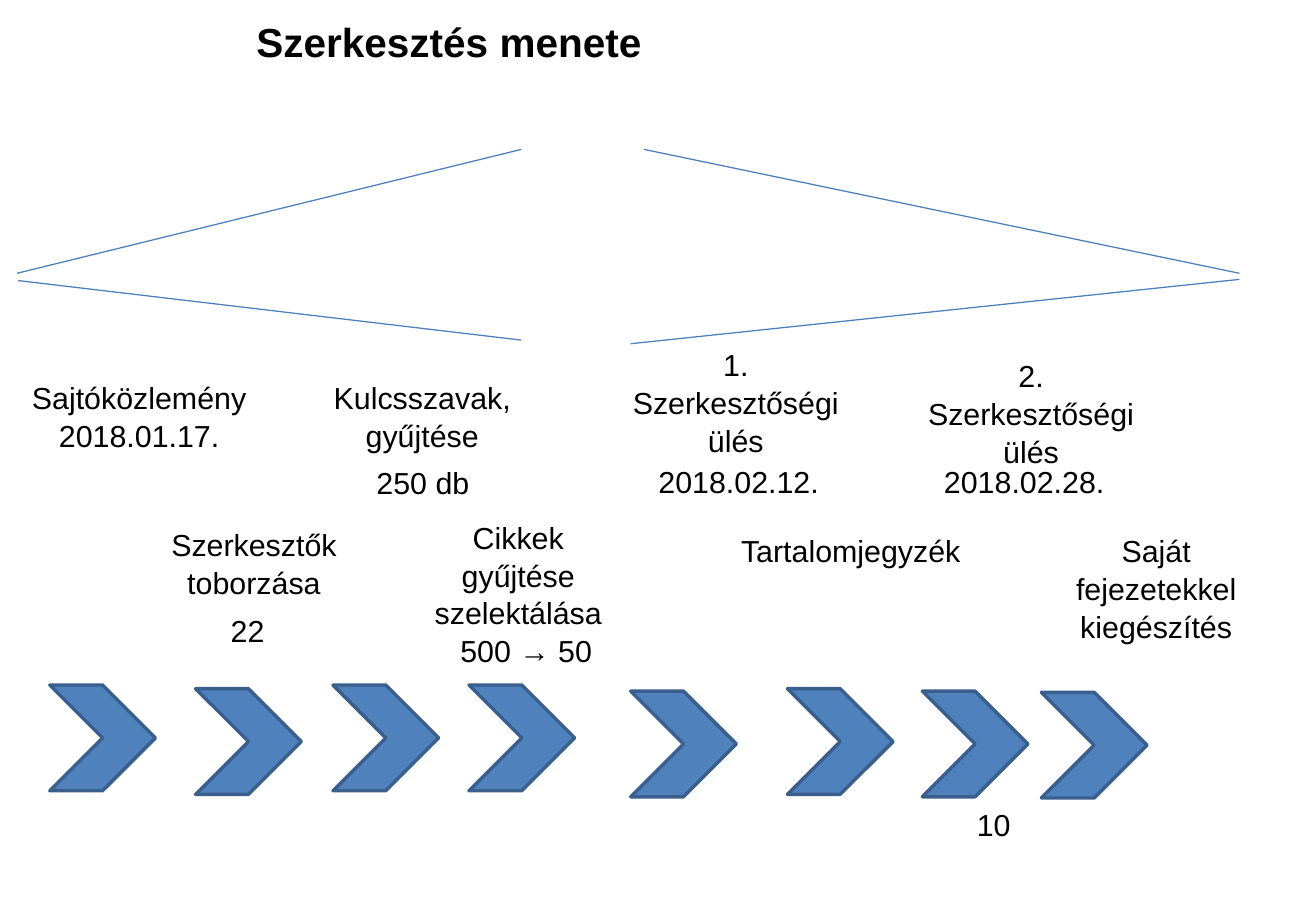
import pptx
import pptx.dml.color
import pptx.enum.shapes
import pptx.enum.text
import pptx.oxml.ns
import pptx.util
from dataclasses import dataclass

Inches = pptx.util.Inches
Pt = pptx.util.Pt
ALIGN = pptx.enum.text.PP_ALIGN
ANCHOR = pptx.enum.text.MSO_ANCHOR


@dataclass(frozen=True)
class Theme:
    font: str = "Arial"
    text: str = "000000"
    chevron_fill: str = "4F81BD"
    chevron_line: str = "3A5F8C"
    ray: str = "4B7EBC"
    title_size: float = 24
    label_size: float = 18
    label_spacing: float = 1.04
    chevron_width: float = 2
    ray_width: float = 0.75


THEME = Theme()
SLIDE_SIZE = (10.83, 7.5)
TITLE = "Szerkesztés menete"
TITLE_BOX = (2.11, 0, 8.18, 0.68)

# Step names: paragraphs, then left, top, width, height
STEPS = [
    (["Sajtóközlemény", "2018.01.17."], (0.12, 3.06, 2.05, 1.01)),
    (["Szerkesztők toborzása"], (1.1, 4.27, 1.98, 0.71)),
    (["Kulcsszavak, gyűjtése"], (2.45, 3.06, 2.05, 0.71)),
    (["Cikkek", "gyűjtése", "szelektálása"], (3.24, 4.21, 2.05, 1.01)),
    (["1. Szerkesztőségi ülés"], (5.08, 2.79, 1.95, 1.01)),
    (["2. Szerkesztőségi ülés"], (7.52, 2.88, 1.93, 1.01)),
    (["Saját fejezetekkel kiegészítés"], (8.69, 4.32, 1.65, 1.01)),
]
# Left-aligned labels: counts, dates and the contents step
DETAILS = [
    (["22"], (1.8, 4.98, 0.66, 0.4)),
    (["250 db"], (3, 3.76, 1.03, 0.4)),
    (["500 → 50"], (3.69, 5.14, 1.33, 0.4)),
    (["2018.02.12."], (5.32, 3.75, 1.93, 0.4)),
    (["Tartalomjegyzék"], (6, 4.32, 2.11, 0.4)),
    (["2018.02.28."], (7.67, 3.75, 1.84, 0.4)),
    (["10"], (7.94, 6.58, 2.26, 0.54)),
]
CHEVRON_SIDE = 0.87
CHEVRONS = [(0.41, 5.64), (1.61, 5.67), (2.74, 5.64), (3.86, 5.64),
            (5.19, 5.69), (6.48, 5.67), (7.59, 5.69), (8.57, 5.7)]
RAYS = [((4.29, 1.23), (0.14, 2.25)), ((0.15, 2.31), (4.29, 2.8)),
        ((5.3, 1.23), (10.2, 2.25)), ((5.19, 2.83), (10.2, 2.3))]


def inches(values):
    return [Inches(value) for value in values]


def color(code):
    return pptx.dml.color.RGBColor.from_string(code)


def write(box, paragraphs, size, align=ALIGN.LEFT, bold=False,
          anchor=ANCHOR.TOP, margins=(0.1, 0.05), spacing=1.0):
    frame = box.text_frame
    frame.word_wrap = True
    frame.vertical_anchor = anchor
    frame.margin_left = frame.margin_right = Inches(margins[0])
    frame.margin_top = frame.margin_bottom = Inches(margins[1])
    for index, text in enumerate(paragraphs):
        para = frame.add_paragraph() if index else frame.paragraphs[0]
        para.alignment = align
        para.line_spacing = spacing
        span = para.add_run()
        span.text = text
        span.font.name = THEME.font
        span.font.size = Pt(size)
        span.font.bold = bold
        span.font.color.rgb = color(THEME.text)


def add_title(page):
    title = page.shapes.title
    title.left, title.top, title.width, title.height = inches(TITLE_BOX)
    write(title, [TITLE], THEME.title_size, bold=True,
          anchor=ANCHOR.MIDDLE, margins=(0, 0))


def add_labels(page, labels, align):
    for paragraphs, place in labels:
        box = page.shapes.add_textbox(*inches(place))
        write(box, paragraphs, THEME.label_size, align=align,
              spacing=THEME.label_spacing)


def add_chevron(page, corner):
    chevron = page.shapes.add_shape(
        pptx.enum.shapes.MSO_SHAPE.CHEVRON,
        *inches((*corner, CHEVRON_SIDE, CHEVRON_SIDE)))
    chevron.shadow.inherit = False
    chevron.fill.solid()
    chevron.fill.fore_color.rgb = color(THEME.chevron_fill)
    chevron.line.color.rgb = color(THEME.chevron_line)
    chevron.line.width = Pt(THEME.chevron_width)


def add_ray(page, start, end):
    ray = page.shapes.add_connector(
        pptx.enum.shapes.MSO_CONNECTOR.STRAIGHT, *inches((*start, *end)))
    ray.line.color.rgb = color(THEME.ray)
    ray.line.width = Pt(THEME.ray_width)
    properties = ray._element.spPr
    properties.append(properties.makeelement(pptx.oxml.ns.qn("a:effectLst"), {}))


def main():
    deck = pptx.Presentation()
    deck.slide_width, deck.slide_height = inches(SLIDE_SIZE)
    page = deck.slides.add_slide(deck.slide_layouts.get_by_name("Title Only"))
    add_title(page)
    for start, end in RAYS:
        add_ray(page, start, end)
    for corner in CHEVRONS:
        add_chevron(page, corner)
    add_labels(page, STEPS, ALIGN.CENTER)
    add_labels(page, DETAILS, ALIGN.LEFT)
    deck.save("out.pptx")


if __name__ == "__main__":
    main()
